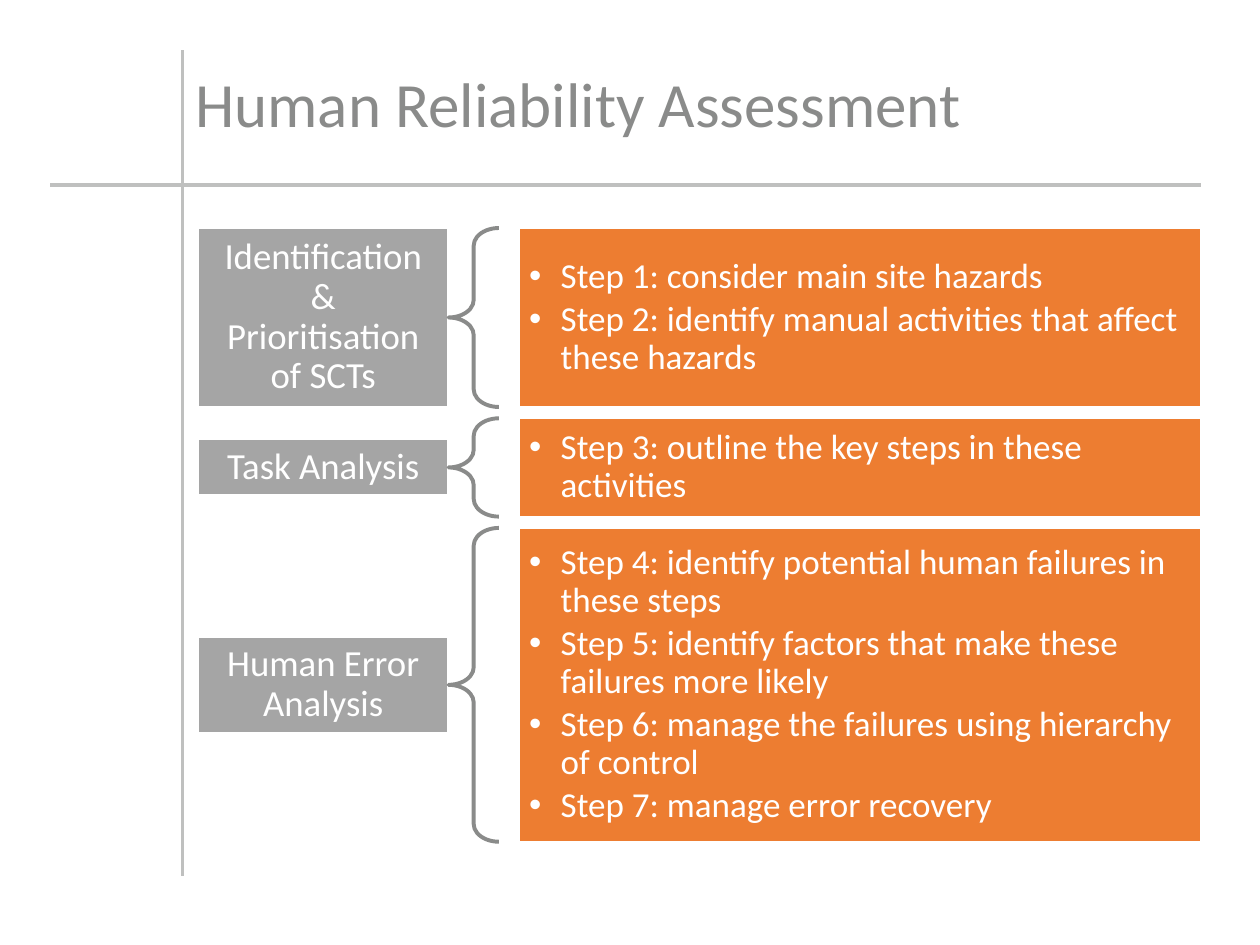
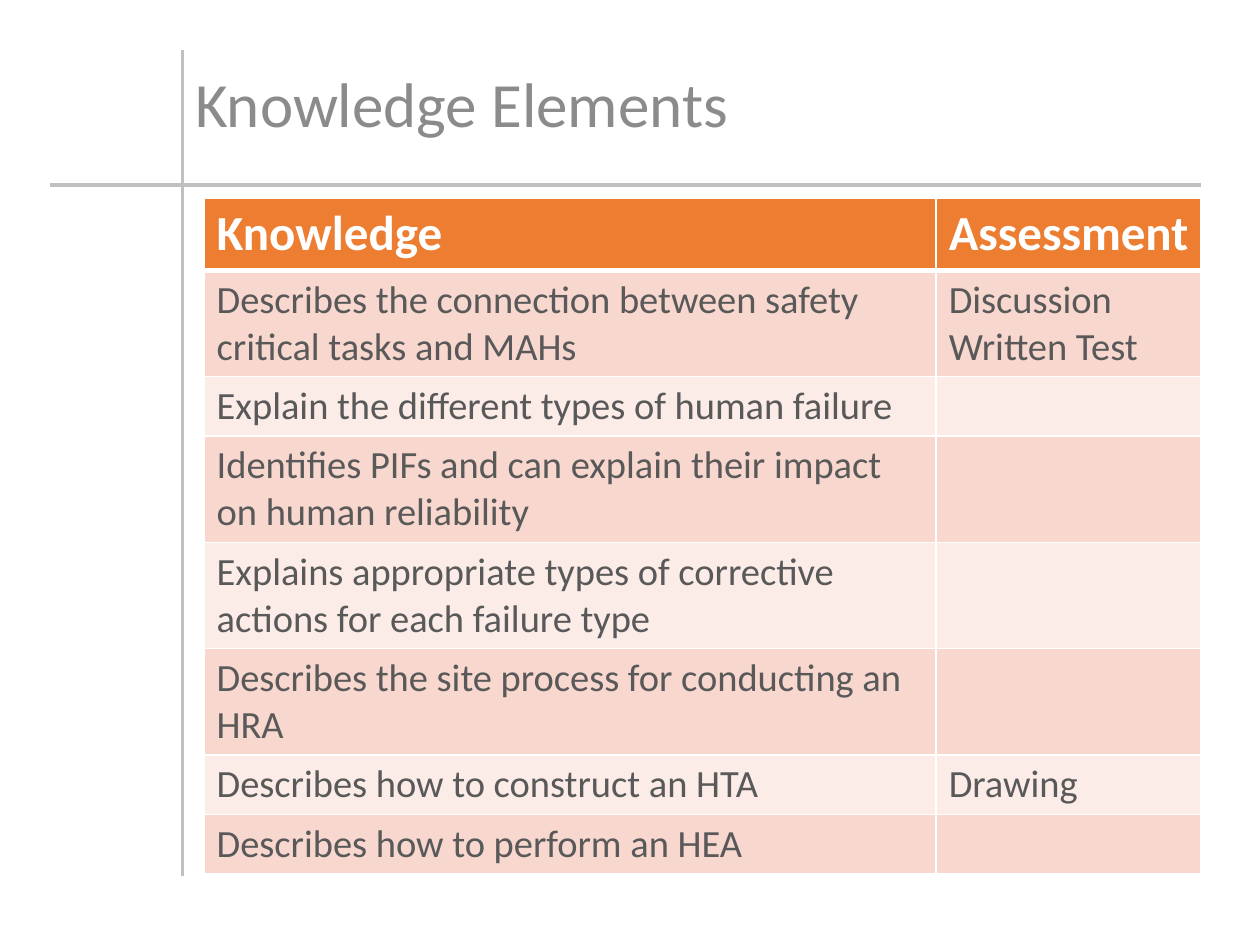
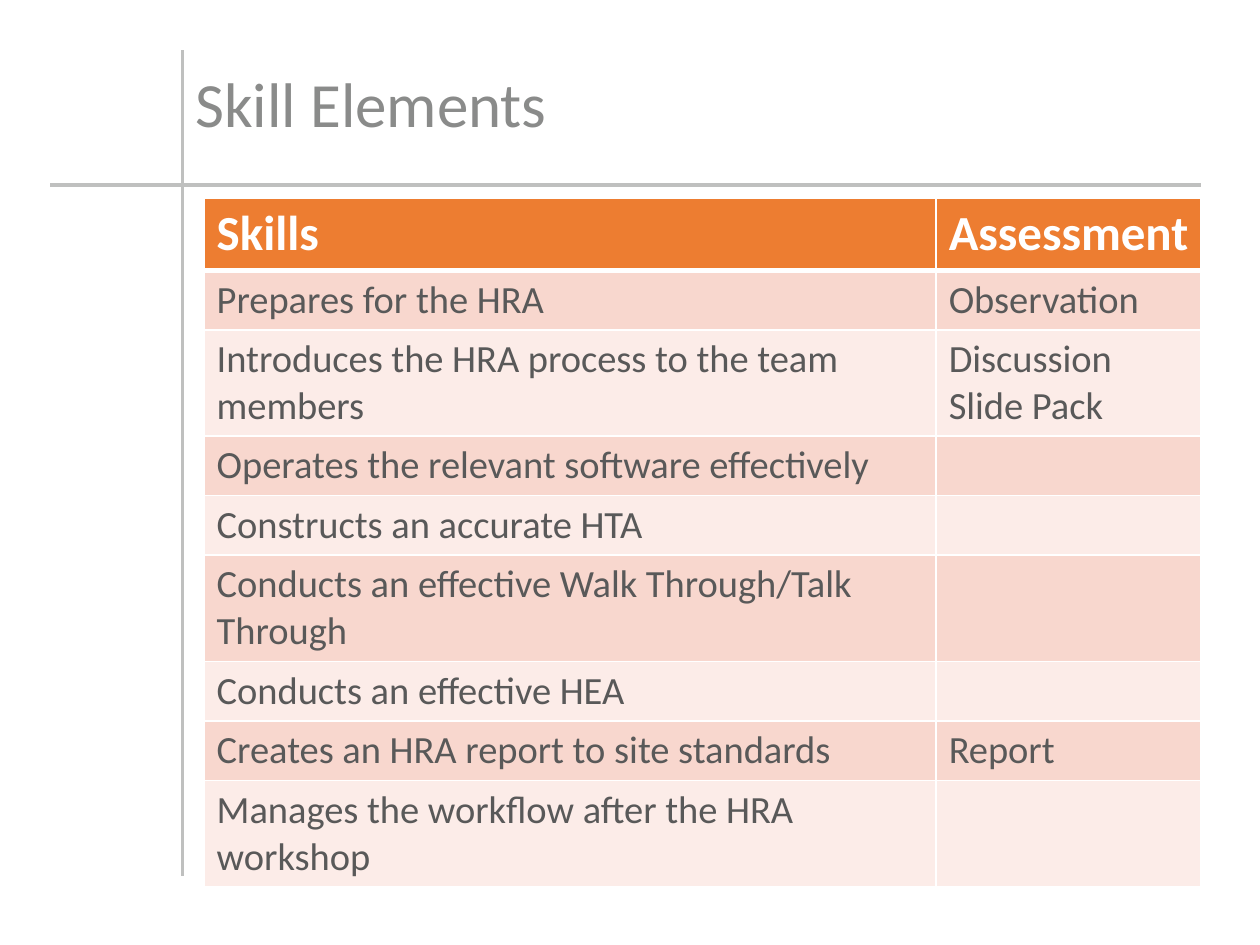
import pptx
import pptx.dml.color
import pptx.enum.shapes
import pptx.enum.text
import pptx.oxml
import pptx.oxml.ns
import pptx.util
from pptx.util import Inches, Pt

FONT = "Calibri"
WHITE = "FFFFFF"
GREY_RULE = "BFC0BF"
GREY_TITLE = "8A8B8A"
GREY_LABEL = "A5A5A5"
GREY_TEXT = "595959"
ORANGE = "ED7D31"
ROW_TINTS = ("F8D7CE", "FCECE8")

SHAPES = pptx.enum.shapes.MSO_SHAPE
LEFT = pptx.enum.text.PP_ALIGN.LEFT
CENTER = pptx.enum.text.PP_ALIGN.CENTER
MIDDLE = pptx.enum.text.MSO_ANCHOR.MIDDLE

# Label, its height, the height of its steps, the steps
STAGES = [
    ("Identification & Prioritisation of SCTs", 1.42, 1.42, [
        "Step 1: consider main site hazards",
        "Step 2: identify manual activities that affect these hazards",
    ]),
    ("Task Analysis", 0.45, 0.78, [
        "Step 3: outline the key steps in these activities",
    ]),
    ("Human Error Analysis", 0.77, 2.49, [
        "Step 4: identify potential human failures in these steps",
        "Step 5: identify factors that make these failures more likely",
        "Step 6: manage the failures using hierarchy of control",
        "Step 7: manage error recovery",
    ]),
]

KNOWLEDGE = [
    ("Knowledge", "Assessment"),
    ("Describes the connection between safety critical tasks and MAHs",
     "Discussion\nWritten Test"),
    ("Explain the different types of human failure", ""),
    ("Identifies PIFs and can explain their impact on human reliability", ""),
    ("Explains appropriate types of corrective actions for each failure type", ""),
    ("Describes the site process for conducting an HRA", ""),
    ("Describes how to construct an HTA", "Drawing"),
    ("Describes how to perform an HEA", ""),
]

SKILLS = [
    ("Skills", "Assessment"),
    ("Prepares for the HRA", "Observation"),
    ("Introduces the HRA process to the team members", "Discussion\nSlide Pack"),
    ("Operates the relevant software effectively", ""),
    ("Constructs an accurate HTA", ""),
    ("Conducts an effective Walk Through/Talk Through", ""),
    ("Conducts an effective HEA", ""),
    ("Creates an HRA report to site standards", "Report"),
    ("Manages the workflow after the HRA workshop", ""),
]


def rgb(value):
    return pptx.dml.color.RGBColor.from_string(value)


def add_xml(parent, tag, content="", **attributes):
    """Append a drawing element to a parent element."""
    listed = "".join(f' {name}="{value}"' for name, value in attributes.items())
    namespace = pptx.oxml.ns.nsdecls("a")
    parent.append(pptx.oxml.parse_xml(
        f"<a:{tag} {namespace}{listed}>{content}</a:{tag}>"))


def set_text(frame, text, size=20, color=WHITE, bold=False, align=LEFT,
             line_spacing=None, space_after=0, bullet=False):
    """Write one paragraph for each line of the text."""
    frame.word_wrap = True
    for index, line in enumerate(text.split("\n")):
        paragraph = frame.add_paragraph() if index else frame.paragraphs[0]
        paragraph.text = line
        paragraph.alignment = align
        paragraph.line_spacing = line_spacing
        paragraph.space_after = Pt(space_after)
        if bullet:
            properties = paragraph._p.get_or_add_pPr()
            properties.set("marL", str(Inches(0.25)))
            properties.set("indent", str(Inches(-0.25)))
            add_xml(properties, "buFont", typeface="Arial")
            add_xml(properties, "buChar", char="•")
        font = paragraph.font
        font.name, font.size, font.bold = FONT, Pt(size), bold
        font.color.rgb = rgb(color)


def add_box(slide, kind, left, top, width, height, fill=None, line=WHITE,
            line_width=1, insets=(0, 0)):
    shape = slide.shapes.add_shape(
        kind, Inches(left), Inches(top), Inches(width), Inches(height))
    shape.shadow.inherit = False
    if fill:
        shape.fill.solid()
        shape.fill.fore_color.rgb = rgb(fill)
    else:
        shape.fill.background()
    shape.line.color.rgb = rgb(line)
    shape.line.width = Pt(line_width)
    frame = shape.text_frame
    frame.vertical_anchor = MIDDLE
    frame.margin_left = frame.margin_right = Inches(insets[0])
    frame.margin_top = frame.margin_bottom = Inches(insets[1])
    return shape


def add_layout_rules(layout, slide):
    """Draw the crossing rules, then move them to the layout all slides share."""
    for ends in ((1.45, 0.4, 1.45, 6.95), (9.53, 1.47, 0.4, 1.47)):
        rule = slide.shapes.add_connector(
            pptx.enum.shapes.MSO_CONNECTOR.STRAIGHT, *map(Inches, ends))
        rule.line.color.rgb = rgb(GREY_RULE)
        rule.line.width = Pt(2)
        add_xml(rule.element.spPr, "effectLst")
        layout.shapes.element.append(rule.element)


def add_titled_slide(presentation, layout, title):
    slide = presentation.slides.add_slide(layout)
    shape = slide.shapes.title
    shape.left, shape.top = Inches(1.45), Inches(0.4)
    shape.width, shape.height = Inches(8.08), Inches(0.9)
    shape.text_frame.auto_size = pptx.enum.text.MSO_AUTO_SIZE.NONE
    shape.text_frame.vertical_anchor = MIDDLE
    set_text(shape.text_frame, title, size=36, color=GREY_TITLE, line_spacing=0.9)
    return slide


def add_stage(slide, left, top, width, height, label, label_height, steps):
    """One label, a brace and the steps it covers."""
    label_width, brace_width, gap = 1.99, 0.4, 0.16
    label_top = top + (height - label_height) / 2
    label_box = add_box(slide, SHAPES.RECTANGLE, left, label_top, label_width,
                        label_height, fill=GREY_LABEL, line_width=1.5,
                        insets=(0.16, 0.06))
    set_text(label_box.text_frame, label, size=21, align=CENTER, line_spacing=0.9)

    brace_left = left + label_width
    brace = add_box(slide, SHAPES.LEFT_BRACE, brace_left, top, brace_width,
                    height, line=GREY_TITLE, line_width=2.25)
    brace.adjustments[0] = 0.35

    steps_left = brace_left + brace_width + gap
    steps_box = add_box(slide, SHAPES.RECTANGLE, steps_left, top,
                        left + width - steps_left, height, fill=ORANGE,
                        insets=(0.08, 0.08))
    set_text(steps_box.text_frame, "\n".join(steps), line_spacing=0.9,
             space_after=3, bullet=True)


def add_stages(slide, left, top, width, gap):
    for label, label_height, height, steps in STAGES:
        add_stage(slide, left, top, width, height, label, label_height, steps)
        top += height + gap


def set_borders(cell, bottom_width):
    properties = cell._tc.get_or_add_tcPr()
    color = f'<a:solidFill><a:srgbClr val="{WHITE}"/></a:solidFill>'
    for side, width in (("L", 1), ("R", 1), ("T", 1), ("B", bottom_width)):
        add_xml(properties, f"ln{side}", color, w=Pt(width))


def add_assessment_table(slide, left, top, column_widths, rows):
    row_height = 0.41
    table = slide.shapes.add_table(
        len(rows), len(column_widths), Inches(left), Inches(top),
        Inches(sum(column_widths)), Inches(row_height * len(rows))).table
    table.horz_banding = False
    for column, width in zip(table.columns, column_widths):
        column.width = Inches(width)
    for row_index, texts in enumerate(rows):
        table.rows[row_index].height = Inches(row_height)
        header = row_index == 0
        fill = ORANGE if header else ROW_TINTS[(row_index - 1) % 2]
        for column_index, text in enumerate(texts):
            cell = table.cell(row_index, column_index)
            # A slightly narrow margin keeps the header word on one line
            cell.margin_right = Inches(0.08)
            set_borders(cell, 3 if header else 1)
            cell.fill.solid()
            cell.fill.fore_color.rgb = rgb(fill)
            set_text(cell.text_frame, text, size=28 if header else 22,
                     color=WHITE if header else GREY_TEXT, bold=header)


def main():
    presentation = pptx.Presentation()
    presentation.slide_width = Inches(10)
    presentation.slide_height = Inches(7.5)
    layout = presentation.slide_layouts.get_by_name("Title Only")

    # Assessment stages
    slide = add_titled_slide(presentation, layout, "Human Reliability Assessment")
    add_layout_rules(layout, slide)
    add_stages(slide, left=1.57, top=1.81, width=7.96, gap=0.09)

    # Knowledge and skill tables
    for title, rows in (("Knowledge Elements", KNOWLEDGE), ("Skill Elements", SKILLS)):
        slide = add_titled_slide(presentation, layout, title)
        add_assessment_table(slide, 1.62, 1.57, (5.81, 2.1), rows)

    presentation.save("out.pptx")


if __name__ == "__main__":
    main()
